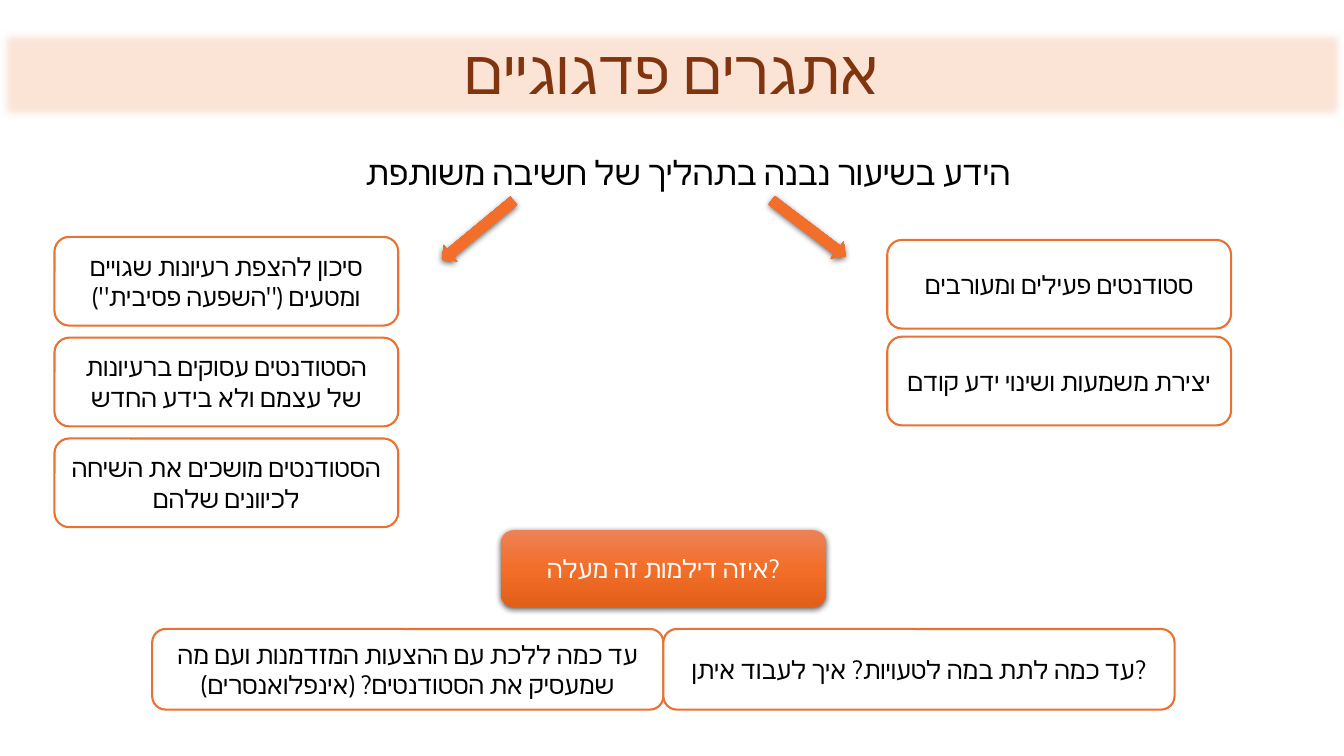
"""Builds a Hebrew slide on pedagogical challenges of shared thinking in class."""
import pptx
import pptx.dml.color
import pptx.enum.shapes
import pptx.enum.text
import pptx.oxml
import pptx.oxml.ns
import pptx.util

PX = 9144
SHAPES = pptx.enum.shapes.MSO_SHAPE
THEME = {
    "band": "FBE3D6", "title": "80350E", "text": "000000", "paper": "FFFFFF",
    "accent": "E97132", "gradient": [(0, "ED8257"), (50, "F26E29"), (100, "E25F1A")],
    "title_font": "Calibri", "body_font": "Cabin",
    "title_size": 44, "heading_size": 24, "body_size": 18,
}


def write(shape, text, size=THEME["body_size"], color=THEME["text"], font=THEME["body_font"]):
    """Put centred text with its format into a shape and return the paragraph."""
    frame = shape.text_frame
    frame.word_wrap = True
    frame.auto_size = pptx.enum.text.MSO_AUTO_SIZE.NONE
    frame.vertical_anchor = pptx.enum.text.MSO_ANCHOR.MIDDLE
    paragraph = frame.paragraphs[0]
    paragraph.alignment = pptx.enum.text.PP_ALIGN.CENTER
    run = paragraph.add_run()
    run.text = text
    run.font.size = pptx.util.Pt(size)
    run.font.color.rgb = pptx.dml.color.RGBColor.from_string(color)
    run.font.name = font
    complex_font = pptx.oxml.ns.qn("a:cs")
    run.font._element.makeelement(complex_font)
    run.font._element.append(run.font._element.makeelement(complex_font, {"typeface": font}))
    return paragraph


def add_block(kind, left, top, width, height, style):
    """Add a plain, outlined or glossy preset shape and return it."""
    shape = slide.shapes.add_shape(kind, left * PX, top * PX, width * PX, height * PX)
    shape.shadow.inherit = False
    shape.fill.background()
    shape.line.fill.background()
    if style == "outlined":
        shape.fill.solid()
        shape.fill.fore_color.rgb = pptx.dml.color.RGBColor.from_string(THEME["paper"])
        shape.line.color.rgb = pptx.dml.color.RGBColor.from_string(THEME["accent"])
        shape.line.width = pptx.util.Pt(1.5)
    if style == "glossy":
        properties = shape._element.spPr
        namespace = pptx.oxml.ns.nsdecls("a")
        stops = "".join(
            f'<a:gs pos="{position * 1000}"><a:srgbClr val="{color}"/></a:gs>'
            for position, color in THEME["gradient"])
        gradient = pptx.oxml.parse_xml(
            f'<a:gradFill {namespace} rotWithShape="1"><a:gsLst>{stops}</a:gsLst>'
            '<a:lin ang="5400000" scaled="0"/></a:gradFill>')
        properties.replace(properties.find(pptx.oxml.ns.qn("a:noFill")), gradient)
        properties.find(pptx.oxml.ns.qn("a:effectLst")).append(pptx.oxml.parse_xml(
            f'<a:outerShdw {namespace} blurRad="57150" dist="19050" dir="5400000" '
            'algn="ctr" rotWithShape="0"><a:srgbClr val="000000">'
            '<a:alpha val="63000"/></a:srgbClr></a:outerShdw>'))
    return shape


presentation = pptx.Presentation()
presentation.slide_width = 1333 * PX
presentation.slide_height = 750 * PX
slide = presentation.slides.add_slide(presentation.slide_layouts[5])

title = slide.shapes.title
title.left, title.top, title.width, title.height = 0, 30 * PX, 1333 * PX, 88 * PX
title.fill.solid()
title.fill.fore_color.rgb = pptx.dml.color.RGBColor.from_string(THEME["band"])
title._element.spPr.append(pptx.oxml.parse_xml(
    f'<a:effectLst {pptx.oxml.ns.nsdecls("a")}><a:softEdge rad="63500"/></a:effectLst>'))
title_paragraph = write(title, "אתגרים פדגוגיים", size=THEME["title_size"],
                        color=THEME["title"], font=THEME["title_font"])
title_paragraph.line_spacing = 0.9
title_paragraph._p.get_or_add_pPr().set("rtl", "1")

heading = add_block(SHAPES.ROUNDED_RECTANGLE, 249, 119, 867, 104, "plain")
write(heading, "הידע בשיעור נבנה בתהליך של חשיבה משותפת", size=THEME["heading_size"])

for left, top, rotation in [(756, 216, 37.1), (428, 218, 140.4)]:
    arrow = add_block(SHAPES.RIGHT_ARROW, left, top, 92, 21, "glossy")
    arrow.rotation = rotation

columns = [
    (880, 238, 96, ["סטודנטים פעילים ומעורבים", "יצירת משמעות ושינוי ידע קודם"]),
    (54, 235, 100, ['סיכון להצפת רעיונות שגויים ומטעים ("השפעה פסיבית")',
                    "הסטודנטים עסוקים ברעיונות של עצמם ולא בידע החדש",
                    "הסטודנטים מושכים את השיחה לכיוונים שלהם"]),
]
for left, top, step, points in columns:
    for row, point in enumerate(points):
        box = add_block(SHAPES.ROUNDED_RECTANGLE, left, top + row * step, 341, 88, "outlined")
        write(box, point)

question = add_block(SHAPES.ROUNDED_RECTANGLE, 497, 526, 322, 76, "glossy")
write(question, "איזה דילמות זה מעלה?", color=THEME["paper"])

dilemmas = ["עד כמה ללכת עם ההצעות המזדמנות ועם מה שמעסיק את הסטודנטים? (אינפלואנסרים)",
            "עד כמה לתת במה לטעויות? איך לעבוד איתן?"]
for column, dilemma in enumerate(dilemmas):
    box = add_block(SHAPES.ROUNDED_RECTANGLE, 151 + column * 507, 624, 507, 80, "outlined")
    write(box, dilemma)

presentation.save("out.pptx")
